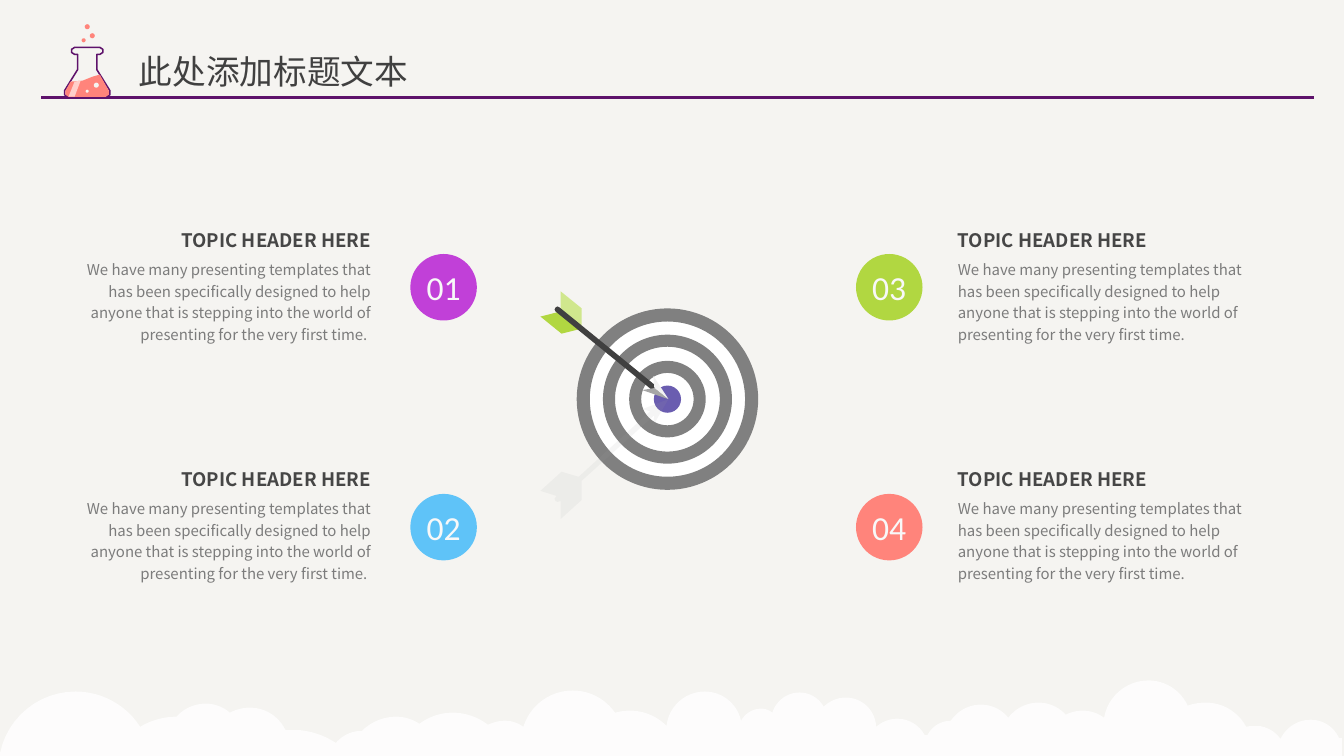
import math
from lxml import etree
from pptx import Presentation
from pptx import util as u
from pptx.dml.color import RGBColor
from pptx.enum import shapes, text
from pptx.oxml import ns

COLORS = {
    "paper": "F5F4F1", "white": "FFFFFF", "number": "F8F8F8",
    "header": "464646", "body": "7C7C7C", "title": "404040",
    "ring": "808080", "bullseye": "6A5DB0", "plum": "5E126B",
    "purple": "C140D8", "blue": "5FC3F8", "green": "B1D741", "coral": "FF847B",
    "light green": "D0E78D", "light coral": "FFCECA",
    "silver": "A6A6A6", "pale silver": "F2F2F2",
}
CJK = "Noto Sans CJK SC"


def paint(shape, color, alpha=None):
    """Give a shape a plain fill, with alpha in percent, and no line or shadow."""
    shape.shadow.inherit = False
    shape.line.fill.background()
    shape.fill.solid()
    shape.fill.fore_color.rgb = RGBColor.from_string(COLORS[color])
    if alpha:
        tint = shape.fill._xPr.find(".//" + ns.qn("a:srgbClr"))
        etree.SubElement(tint, ns.qn("a:alpha"), val=str(alpha * 1000))
    return shape


def write(para, words, size, color, font=CJK, bold=False):
    span = para.add_run()
    span.text = words
    style = {"size": u.Pt(size), "name": font, "bold": bold}
    for key, value in style.items():
        setattr(span.font, key, value)
    span.font.color.rgb = RGBColor.from_string(COLORS[color])
    latin = span.font._element.find(ns.qn("a:latin"))
    latin.addnext(latin.makeelement(ns.qn("a:ea"), {"typeface": font}))


deck = Presentation()
deck.slide_width, deck.slide_height = u.Inches(13.33), u.Inches(7.5)
page = deck.slides.add_slide(deck.slide_layouts[6])
page.background.fill.solid()
page.background.fill.fore_color.rgb = RGBColor.from_string(COLORS["paper"])

# Clouds: every stretch is a circular arc that is level at its higher end
cloud_turns = [
    (0, 7.47), (0.75, 6.86), (1.39, 7.21), (1.75, 7.11), (2.04, 6.98), (2.28, 7.07),
    (2.48, 7.02), (2.83, 7.24), (2.9, 7.24), (3.33, 7.37), (3.59, 7.25), (3.93, 7.11),
    (4.16, 7.18), (4.49, 7.07), (4.84, 7.19), (5.01, 7.15), (5.19, 7.21), (5.68, 6.85),
    (6.1, 7.07), (6.25, 7.05), (6.61, 7.2), (6.99, 6.86), (7.35, 7.15), (7.55, 7.03),
    (7.66, 7.07), (7.93, 6.87), (8.17, 7.01), (8.39, 6.92), (8.69, 7.21), (8.9, 7.13),
    (9.17, 7.29), (9.2, 7.29), (9.43, 7.15), (9.73, 6.99), (10, 7.12), (10.3, 6.97),
    (10.57, 7.09), (10.74, 7.05), (10.95, 7.12), (11.39, 6.75), (11.78, 7), (11.96, 6.97),
    (12.36, 7.21), (12.45, 7.2), (12.7, 7.33), (13, 7.14), (13.28, 7.32), (13.31, 7.32),
]
cloud_edge = [(-0.01, 7.5), cloud_turns[0]]
for start, end in zip(cloud_turns, cloud_turns[1:]):
    top, low = sorted((start, end), key=lambda point: point[1])
    rise = low[1] - top[1]
    if rise:
        radius = math.dist(top, low) ** 2 / (2 * rise)
        middle = top[1] + radius
        first, last = (math.atan2(x - top[0], middle - y) for x, y in (start, end))
        for step in range(1, 12):
            angle = first + (last - first) * step / 12
            cloud_edge.append((top[0] + radius * math.sin(angle),
                               middle - radius * math.cos(angle)))
    cloud_edge.append(end)
cloud_edge.append((13.31, 7.5))

# Topics: text box and numbered disc
BLURB = ("We have many presenting templates that has been specifically designed to help "
         "anyone that is stepping into the world of presenting for the very first time.")
left_side = (0.74, 4.07, text.PP_ALIGN.RIGHT, BLURB + " ")
right_side = (9.5, 8.49, text.PP_ALIGN.LEFT, BLURB)
topics = [
    ("01", "purple", left_side, 2.23, 2.52), ("02", "blue", left_side, 4.6, 4.9),
    ("03", "green", right_side, 2.23, 2.52), ("04", "coral", right_side, 4.6, 4.9),
]
no_margins = dict.fromkeys(("margin_left", "margin_top", "margin_right", "margin_bottom"), 0)
for number, color, (text_left, disc_left, align, blurb), text_top, disc_top in topics:
    box = page.shapes.add_textbox(u.Inches(text_left), u.Inches(text_top),
                                  u.Inches(2.94), u.Inches(1.19))
    disc = paint(page.shapes.add_shape(shapes.MSO_SHAPE.OVAL, u.Inches(disc_left),
                                       u.Inches(disc_top), u.Inches(0.66), u.Inches(0.66)), color)
    for frame in (box.text_frame, disc.text_frame):
        for key, value in no_margins.items():
            setattr(frame, key, value)
    box.text_frame.word_wrap = True
    lines = (("TOPIC HEADER HERE", 13.3, "header", True), (blurb, 10.7, "body", False))
    for index, (words, size, ink, bold) in enumerate(lines):
        para = box.text_frame.add_paragraph() if index else box.text_frame.paragraphs[0]
        layout = {"alignment": align, "line_spacing": 1.2, "space_before": u.Pt(4)}
        for key, value in layout.items():
            setattr(para, key, value)
        write(para, words, size, ink, bold=bold)
    disc.text_frame.vertical_anchor = text.MSO_ANCHOR.MIDDLE
    disc.text_frame.paragraphs[0].alignment = text.PP_ALIGN.CENTER
    write(disc.text_frame.paragraphs[0], number, 24, "number", "Calibri")

# Target: discs and rings around one centre
target = page.shapes.add_group_shape()
target_x, target_y = 6.62, 3.96
for size, band, color in [(1.78, 0, "white"), (0.27, 0, "bullseye"), (1.8, 0.13, "ring"),
                          (1.28, 0.12, "ring"), (0.76, 0.12, "ring")]:
    kind = shapes.MSO_SHAPE.DONUT if band else shapes.MSO_SHAPE.OVAL
    ring = paint(target.shapes.add_shape(kind, u.Inches(target_x - size / 2),
                                         u.Inches(target_y - size / 2),
                                         u.Inches(size), u.Inches(size)), color)
    if band:
        ring.adjustments[0] = band / size

# Title and rule
title = page.shapes.add_textbox(u.Inches(1.28), u.Inches(0.46), u.Inches(2.89), u.Inches(0.5))
title.text_frame.word_wrap = False
write(title.text_frame.paragraphs[0], "此处添加标题文本", 24, "title")
rule = page.shapes.add_connector(shapes.MSO_CONNECTOR.STRAIGHT, u.Inches(0.41),
                                 u.Inches(0.97), u.Inches(13.03), u.Inches(0.97))
rule.line.width = u.Pt(2)
rule.line.color.rgb = RGBColor.from_string(COLORS["plum"])
etree.SubElement(rule._element.spPr, ns.qn("a:effectLst"))

# Outlines: clouds, arrow with its shade, flask
arrow = page.shapes.add_group_shape()
flask = page.shapes.add_group_shape()
outlines = [
    (page, "white", 80, cloud_edge),
    (arrow, "green", None, [(5.77, 3.26), (5.57, 3.31), (5.36, 3.14), (5.56, 3.09)]),
    (arrow, "light green", None, [(5.77, 3.26), (5.77, 3.06), (5.56, 2.89), (5.56, 3.09)]),
    (arrow, "title", None, [(6.53, 3.92), (5.51, 3.09), (5.5, 3.07), (5.51, 3.05), (5.53, 3.04),
                            (5.55, 3.05), (6.57, 3.88), (6.58, 3.9), (6.57, 3.92), (6.55, 3.93)]),
    (arrow, "silver", None, [(6.37, 3.87), (6.63, 3.96), (6.49, 3.85)]),
    (arrow, "pale silver", None, [(6.49, 3.85), (6.63, 3.96), (6.48, 3.73)]),
    (page, "silver", 10, [(6.63, 3.96), (6.48, 4.22), (6.49, 4.12), (5.77, 4.77), (5.77, 4.96),
                          (5.56, 5.15), (5.56, 4.97), (5.53, 4.98), (5.51, 4.97), (5.5, 4.95),
                          (5.52, 4.92), (5.36, 4.87), (5.57, 4.68), (5.74, 4.73), (6.45, 4.08),
                          (6.37, 4.06)]),
    (flask, "paper", None, [(0.96, 0.69), (0.96, 0.54), (0.99, 0.54), (1.02, 0.52), (1.02, 0.49),
                            (0.99, 0.47), (0.74, 0.47), (0.71, 0.49), (0.71, 0.52), (0.74, 0.54),
                            (0.77, 0.54), (0.77, 0.69), (0.64, 0.9), (0.64, 0.94), (0.68, 0.96),
                            (1.05, 0.96), (1.09, 0.94), (1.09, 0.9)]),
    (flask, "coral", None, [(0.99, 0.74), (0.92, 0.76), (0.82, 0.8), (0.7, 0.81), (0.65, 0.9),
                            (0.65, 0.94), (0.68, 0.96), (1.05, 0.96), (1.08, 0.94), (1.08, 0.9)]),
    (flask, "light coral", None, [(0.68, 0.96), (0.74, 0.96), (0.8, 0.8), (0.74, 0.81)]),
]
for owner, color, alpha, points in outlines:
    corners = [(u.Inches(x), u.Inches(y)) for x, y in points]
    builder = owner.shapes.build_freeform(*corners[0])
    builder.add_line_segments(corners[1:], close=True)
    outline = paint(builder.convert_to_shape(), color, alpha)
    if color == "paper":
        outline.line.width = u.Pt(1.1)
        outline.line.color.rgb = RGBColor.from_string(COLORS["plum"])

for left, top, size, color in [(0.85, 0.89, 0.03, "paper"), (0.93, 0.82, 0.05, "paper"),
                               (0.81, 0.38, 0.04, "coral"), (0.89, 0.33, 0.05, "coral"),
                               (0.84, 0.24, 0.05, "coral")]:
    paint(flask.shapes.add_shape(shapes.MSO_SHAPE.OVAL, u.Inches(left), u.Inches(top),
                                 u.Inches(size), u.Inches(size)), color)

deck.save("out.pptx")
